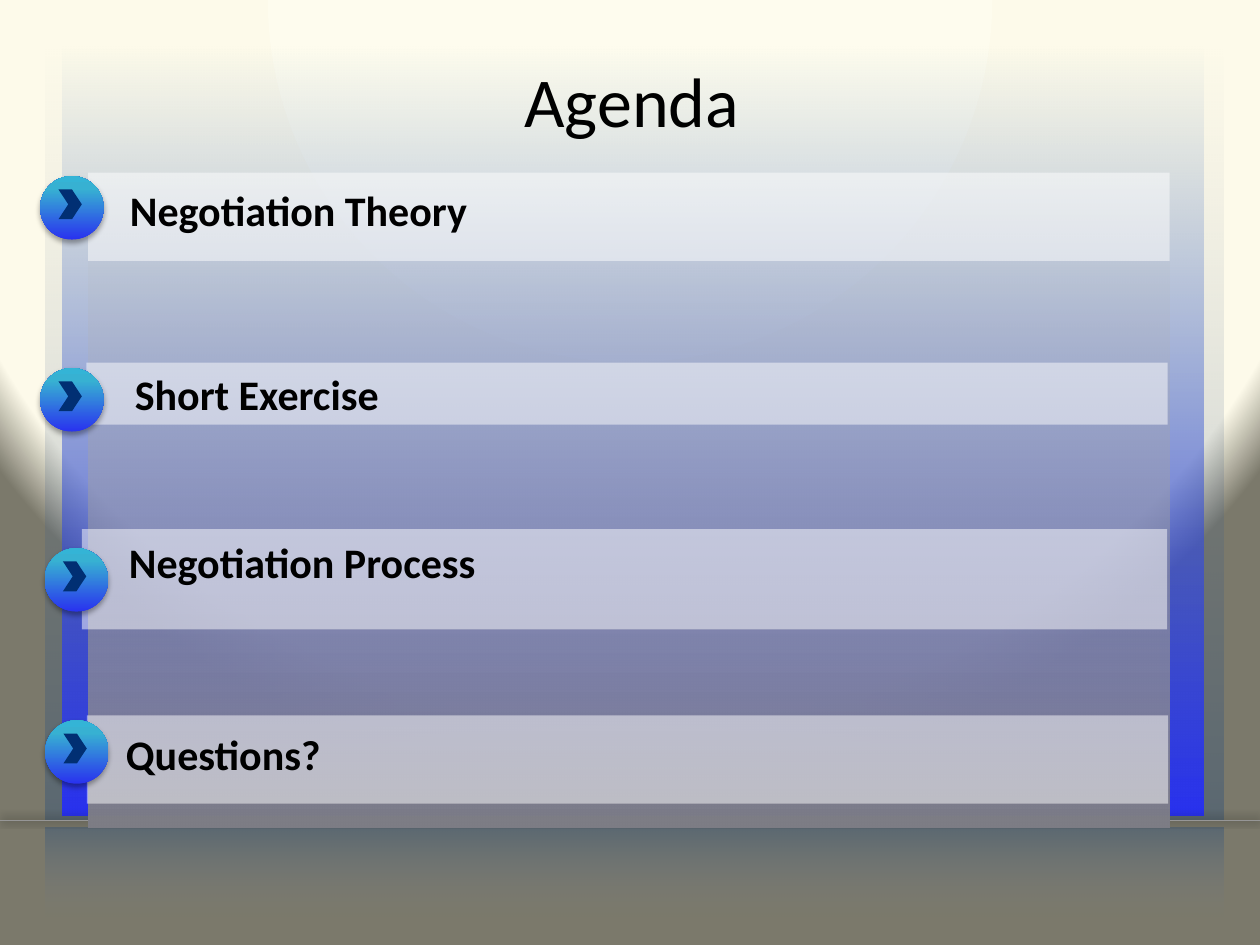
"""Build the agenda slide with four marked bars on a shaded panel."""
import pptx
import pptx.util
import pptx.oxml
import pptx.oxml.ns
import pptx.dml.color
import pptx.enum.shapes
import pptx.enum.text
import lxml.etree

Cm, Pt = pptx.util.Cm, pptx.util.Pt
qn = pptx.oxml.ns.qn
Kind = pptx.enum.shapes.MSO_SHAPE
Anchor = pptx.enum.text.MSO_ANCHOR
Align = pptx.enum.text.PP_ALIGN


class Deck:
    """Hold the style and the current slide."""

    font = "Calibri"
    hues = {"ink": "000000", "white": "FFFFFF", "cream": "FEFCEE", "pale": "FDFAEA",
            "olive": "7B796B", "navy": "1F497D", "slate": "7B869F", "royal": "2932EF",
            "steel": "4F81BD", "gray": "7E7E86", "silver": "C0C0C0", "rule": "969696",
            "aqua": "37B1D2", "teal": "34B4D6", "mark": "012F73"}

    def __init__(self):
        self.file = pptx.Presentation()
        self.file.slide_width, self.file.slide_height = Cm(25.4), Cm(19.05)
        self.slide = self.file.slides.add_slide(self.file.slide_layouts[5])

    def hue(self, name):
        """Return a named colour."""
        return pptx.dml.color.RGBColor.from_string(self.hues[name])

    def blend(self, node, stops, way):
        """Replace the empty fill of a node with a gradient."""
        marks = "".join(
            f'<a:gs pos="{pos * 1000}"><a:srgbClr val="{self.hues[name]}">'
            f'<a:alpha val="{alpha * 1000}"/></a:srgbClr></a:gs>'
            for pos, name, alpha in stops)
        grad = pptx.oxml.parse_xml(
            f'<a:gradFill {pptx.oxml.ns.nsdecls("a")} rotWithShape="1">'
            f"<a:gsLst>{marks}</a:gsLst>{way}</a:gradFill>")
        node.replace(node.find(qn("a:noFill")), grad)

    def shade(self, shape, blur=0, dist=0, turn=90, alpha=0):
        """Set the shadow of a shape, or none."""
        cast = lxml.etree.SubElement(shape.element.spPr, qn("a:effectLst"))
        if alpha:
            cast.append(pptx.oxml.parse_xml(
                f'<a:outerShdw {pptx.oxml.ns.nsdecls("a")} blurRad="{int(Pt(blur))}" '
                f'dist="{int(Pt(dist))}" dir="{turn * 60000}" rotWithShape="0">'
                f'<a:srgbClr val="{self.hues["ink"]}"><a:alpha val="{alpha * 1000}"/>'
                "</a:srgbClr></a:outerShdw>"))

    def back(self, stops):
        """Fill the background with a round gradient."""
        self.slide.background.fill.background()
        node = self.slide.element.find(".//" + qn("p:bgPr"))
        self.blend(node, stops, '<a:path path="circle"><a:fillToRect l="50000" '
                   't="-80000" r="50000" b="180000"/></a:path>')

    def shape(self, kind, box, stops, turn=270, home=None, **cast):
        """Add a shape with a plain or gradient fill."""
        shape = (home or self.slide).shapes.add_shape(kind, *map(Cm, box))
        shape.line.fill.background()
        if isinstance(stops, str):
            shape.fill.solid()
            shape.fill.fore_color.rgb = self.hue(stops)
        else:
            shape.fill.background()
            self.blend(shape.element.spPr, stops,
                       f'<a:lin ang="{turn * 60000}" scaled="0"/>')
        self.shade(shape, **cast)
        return shape

    def panel(self, box, stops, turn=270):
        """Add a square-cornered panel."""
        self.shape(Kind.ROUNDED_RECTANGLE, box, stops, turn).adjustments[0] = 0

    def rule(self, left, top, right):
        """Add the floor line."""
        line = self.slide.shapes.add_connector(
            pptx.enum.shapes.MSO_CONNECTOR.STRAIGHT, *map(Cm, (left, top, right, top)))
        line.line.color.rgb = self.hue("rule")
        line.line.width = Pt(1)
        self.shade(line, blur=5, dist=1, turn=270, alpha=55)

    def say(self, shape, text, size, left=0, top=0, anchor=Anchor.MIDDLE,
            align=Align.LEFT, bold=True):
        """Put one styled paragraph in a shape."""
        frame = shape.text_frame
        frame.word_wrap = True
        frame.auto_size = pptx.enum.text.MSO_AUTO_SIZE.NONE
        frame.vertical_anchor = anchor
        frame.margin_left, frame.margin_top = Cm(left), Cm(top)
        frame.margin_right = frame.margin_bottom = 0
        line = frame.paragraphs[0]
        line.text, line.alignment = text, align
        line.font.name, line.font.size, line.font.bold = self.font, Pt(size), bold
        line.font.color.rgb = self.hue("ink")
        return line

    def title(self, text, box):
        """Place the title above the panels."""
        title = self.slide.shapes.title
        title.left, title.top, title.width, title.height = map(Cm, box)
        self.slide.shapes.element.append(title.element)
        line = self.say(title, text, 40, anchor=Anchor.TOP, align=Align.CENTER,
                        bold=False)
        line.line_spacing = 0.85

    def bar(self, box):
        """Add a half-clear white bar."""
        bar = self.shape(Kind.RECTANGLE, box, "white")
        tint = bar.element.spPr.find(qn("a:solidFill"))[0]
        lxml.etree.SubElement(tint, qn("a:alpha"), val="50000")
        return bar

    def label(self, text, box):
        """Add a text box with a bold entry."""
        self.say(self.slide.shapes.add_textbox(*map(Cm, box)), text, 24)

    def badge(self, left, top):
        """Add a round badge with a chevron."""
        group = self.slide.shapes.add_group_shape()
        glow = [(0, "royal", 100), (80, "aqua", 100), (100, "teal", 100)]
        self.shape(Kind.OVAL, (left, top, 1.28, 1.28), glow, home=group,
                   blur=3.1, dist=1.8, alpha=35)
        mark = self.shape(Kind.CHEVRON, (left + 0.37, top + 0.27, 0.47, 0.6), "mark",
                          home=group)
        mark.adjustments[0] = 0.42


def main():
    """Draw the slide and save it."""
    deck = Deck()
    deck.back([(0, "cream", 100), (92, "pale", 100), (100, "olive", 100)])
    haze = [(0, "navy", 35), (100, "slate", 0)]
    deck.panel((0.91, 0.91, 23.75, 15.62), haze)
    deck.panel((0.91, 16.69, 23.75, 1.78), haze, turn=90)
    deck.panel((1.27, 0.91, 22.99, 15.54), [(0, "royal", 100), (100, "steel", 0)])
    deck.rule(0, 16.54, 25.4)
    deck.shape(Kind.RECTANGLE, (1.78, 3.76, 21.8, 12.92),
               [(0, "gray", 100), (100, "silver", 0)])
    deck.title("Agenda", (1.32, 1.42, 22.83, 1.35))

    deck.bar((1.78, 3.48, 21.8, 1.78))
    deck.label("Negotiation Theory", (2.62, 3.65, 21, 1.17))
    task = deck.bar((1.74, 7.31, 21.8, 1.25))
    deck.say(task, "Short Exercise", 24, left=0.98)
    flow = deck.bar((1.65, 10.67, 21.88, 2.02))
    deck.say(flow, "Negotiation Process", 24, left=0.95, top=0.15, anchor=Anchor.TOP)
    deck.bar((1.75, 14.42, 21.8, 1.78))
    deck.label("Questions?", (2.54, 14.61, 21, 1.17))

    for left, top in ((0.81, 3.55), (0.81, 7.42), (0.9, 11.05), (0.91, 14.52)):
        deck.badge(left, top)
    deck.file.save("out.pptx")


if __name__ == "__main__":
    main()
